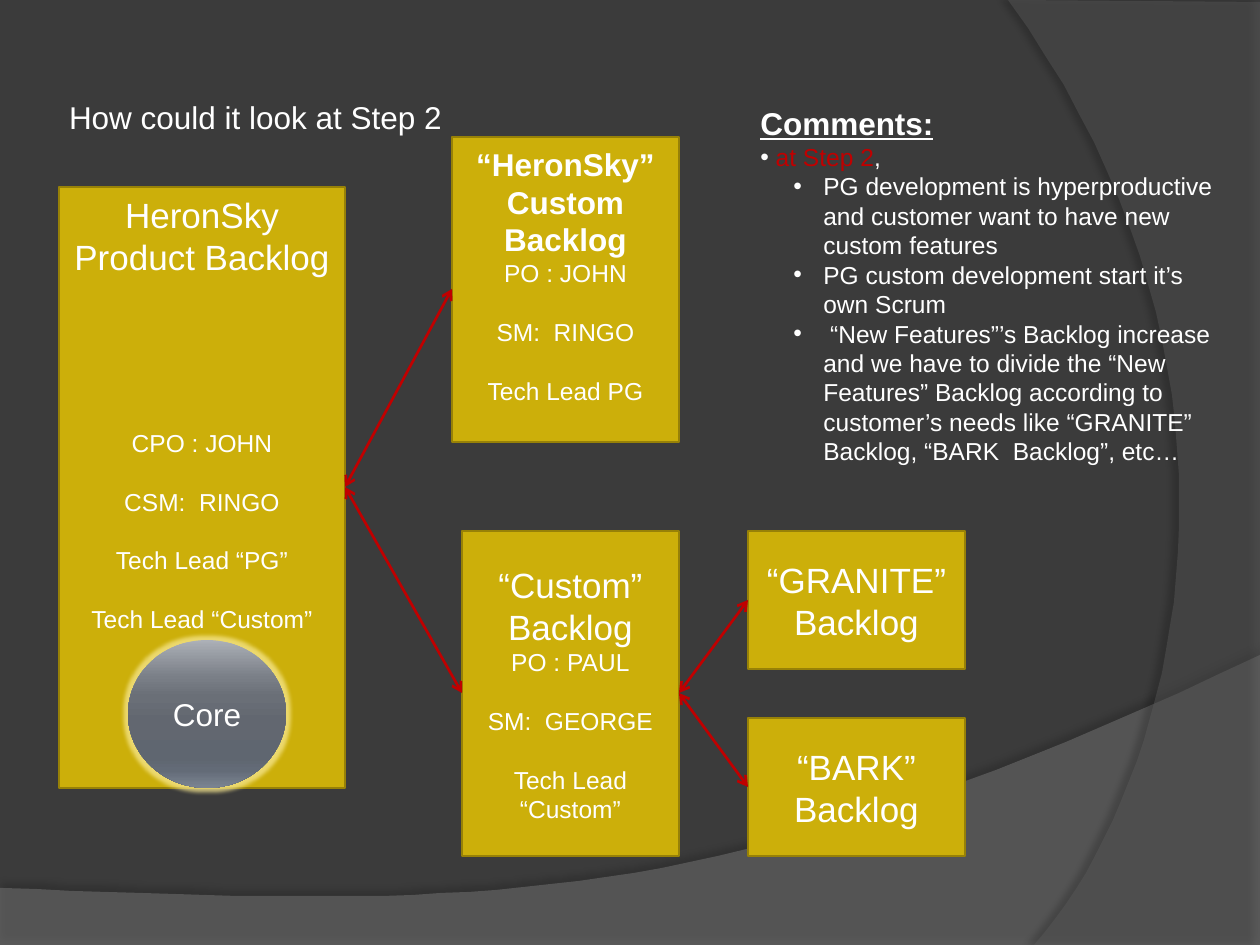
"""Build the Step 2 backlog slide."""
from typing import NamedTuple

from lxml.etree import SubElement
from pptx import Presentation
from pptx.dml.color import RGBColor
from pptx.enum.shapes import MSO_CONNECTOR as Link, MSO_SHAPE as Preset
from pptx.enum.text import MSO_ANCHOR as Anchor, PP_ALIGN as Align
from pptx.oxml.ns import qn
from pptx.util import Emu, Pt

SCALE = 914400 / 126
FONT = "Arial"
BLANK = 16.8
DARK = RGBColor(0x3B, 0x3B, 0x3B)
SWEEP_LOW = RGBColor(0x7F, 0x7F, 0x7F)
SWEEP_RIGHT = RGBColor(0x5E, 0x5E, 0x5E)
BLACK = RGBColor(0, 0, 0)
WHITE = RGBColor(0xFF, 0xFF, 0xFF)
GOLD = RGBColor(0xCC, 0xAF, 0x0A)
GOLD_EDGE = RGBColor(0x97, 0x81, 0x07)
GLOW = RGBColor(0xF8, 0xE8, 0x90)
RED = RGBColor(0xC0, 0, 0)
CORE_STOPS = {
    0: RGBColor(0xAC, 0xB0, 0xB7), 25: RGBColor(0x7A, 0x7F, 0x87),
    38: RGBColor(0x6A, 0x6F, 0x77), 55: RGBColor(0x62, 0x67, 0x70),
    80: RGBColor(0x5F, 0x66, 0x70), 88: RGBColor(0x63, 0x6B, 0x77),
    100: RGBColor(0x7B, 0x84, 0x92),
}


class Line(NamedTuple):
    text: str
    size: int = 14
    bold: bool = False
    gap: float = 0


class Backlog(NamedTuple):
    left: int
    top: int
    width: int
    height: int
    lines: tuple
    anchor: Anchor = Anchor.MIDDLE
    bottom: int = 6

    @property
    def west(self):
        return self.left, self.top + self.height // 2

    @property
    def east(self):
        return self.left + self.width, self.top + self.height // 2


def px(value) -> Emu:
    return Emu(round(value * SCALE))


def add_span(para, text: str, *, size=14, bold=False, underline=False, color=WHITE):
    span = para.add_run()
    span.text = text
    font = span.font
    font.name, font.size, font.bold = FONT, Pt(size), bold
    font.underline = underline
    font.color.rgb = color


def write(frame, text: str, *, align=Align.LEFT, gap=0, **look):
    para = frame.paragraphs[0]
    if para.runs:
        para = frame.add_paragraph()
    para.alignment = align
    para.space_before = Pt(gap)
    add_span(para, text, **look)
    return para


def add_bullet(para, margin: int = 0, hang: int = 0):
    props = para._p.get_or_add_pPr()
    props.set("marL", str(px(margin)))
    props.set("indent", str(-px(hang)))
    SubElement(props, qn("a:buFont"), typeface=FONT)
    SubElement(props, qn("a:buChar"), char="•")


def add_color(parent, color: RGBColor, alpha: int = 100):
    node = SubElement(parent, qn("a:srgbClr"), val=str(color))
    if alpha < 100:
        SubElement(node, qn("a:alpha"), val=str(alpha * 1000))


def add_effect(shape, kind: str, color: RGBColor, alpha: int, **settings):
    effects = shape.element.spPr.find(qn("a:effectLst"))
    add_color(SubElement(effects, qn(kind), **settings), color, alpha)


def curve(start, first, second, end, steps=40) -> list:
    points = []
    for step in range(1, steps + 1):
        t = step / steps
        weights = (1 - t) ** 3, 3 * t * (1 - t) ** 2, 3 * t * t * (1 - t), t ** 3
        points.append(tuple(
            sum(w * p[axis] for w, p in zip(weights, (start, first, second, end)))
            for axis in (0, 1)))
    return points


def add_sweep(page, points, color, alpha, shade, direction):
    builder = page.shapes.build_freeform(*points[0], scale=SCALE)
    builder.add_line_segments(points[1:], close=True)
    shape = builder.convert_to_shape()
    shape.shadow.inherit = False
    shape.line.fill.background()
    shape.fill.solid()
    shape.fill.fore_color.rgb = color
    fill = shape.element.spPr.find(qn("a:solidFill"))
    SubElement(fill[0], qn("a:alpha"), val=str(alpha * 1000))
    add_effect(shape, "a:outerShdw", BLACK, shade, blurRad=str(Pt(4)),
               dist=str(Pt(4)), dir=str(direction * 60000), rotWithShape="0")


def add_backlog(page, box: Backlog):
    shape = page.shapes.add_shape(
        Preset.RECTANGLE, *map(px, (box.left, box.top, box.width, box.height)))
    shape.shadow.inherit = False
    shape.fill.solid()
    shape.fill.fore_color.rgb = GOLD
    shape.line.color.rgb = GOLD_EDGE
    shape.line.width = Pt(1.5)
    frame = shape.text_frame
    frame.word_wrap = True
    frame.vertical_anchor = box.anchor
    frame.margin_bottom = px(box.bottom)
    for line in box.lines:
        write(frame, line.text, align=Align.CENTER, gap=line.gap,
              size=line.size, bold=line.bold)


def add_arrow(page, start, end):
    arrow = page.shapes.add_connector(Link.STRAIGHT, *map(px, (*start, *end)))
    arrow.line.color.rgb = RED
    arrow.line.width = Pt(1.5)
    outline = arrow.line._get_or_add_ln()
    for tip in ("a:headEnd", "a:tailEnd"):
        SubElement(outline, qn(tip), type="arrow")
    SubElement(arrow.element.spPr, qn("a:effectLst"))


def add_core(page):
    core = page.shapes.add_shape(Preset.OVAL, *map(px, (128, 640, 158, 148)))
    core.shadow.inherit = False
    core.line.fill.background()
    core.fill.gradient()
    core.fill.gradient_angle = 270
    stops = core.element.spPr.find(".//" + qn("a:gsLst"))
    stops.clear()
    for position, color in CORE_STOPS.items():
        add_color(SubElement(stops, qn("a:gs"), pos=str(position * 1000)), color)
    add_effect(core, "a:glow", GLOW, 75, rad=str(Pt(5)))
    core.text_frame.vertical_anchor = Anchor.MIDDLE
    write(core.text_frame, "Core", align=Align.CENTER, size=18)


def add_comments(page):
    box = page.shapes.add_textbox(*map(px, (748, 98, 493, 407)))
    frame = box.text_frame
    frame.word_wrap = True
    write(frame, "Comments:", size=18, bold=True, underline=True)
    para = write(frame, " ")
    add_span(para, "at Step 2", color=RED)
    add_span(para, ",")
    add_bullet(para)
    for text in (
        "PG development is hyperproductive and customer want to have new custom features",
        "PG custom development start it’s own Scrum",
        " “New Features”’s Backlog increase and we have to divide the “New Features” "
        "Backlog according to customer’s needs like “GRANITE” Backlog, "
        "“BARK  Backlog”, etc…",
    ):
        add_bullet(write(frame, text), margin=63, hang=30)


def main():
    deck = Presentation()
    deck.slide_width, deck.slide_height = px(1260), px(945)
    page = deck.slides.add_slide(deck.slide_layouts[5])
    page.background.fill.solid()
    page.background.fill.fore_color.rgb = DARK
    low = [(0, 888), (0, 945), (1260, 945), (1260, 655)]
    add_sweep(page, low + curve(low[-1], (704, 919), (493, 906), low[0]),
              SWEEP_LOW, 45, 35, 270)
    right = [(1260, 2), (1260, 945), (1034, 945)]
    add_sweep(page, right + curve(right[-1], (1178, 780), (1283, 378), (1008, 0)),
              SWEEP_RIGHT, 40, 45, 180)

    title = page.shapes.title
    title.element.getparent().append(title.element)
    title.left, title.top, title.width, title.height = map(px, (63, 38, 1029, 157))
    frame = title.text_frame
    frame.vertical_anchor = Anchor.MIDDLE
    frame.margin_left = frame.margin_right = px(6)
    write(frame, "How could it look at Step 2", size=18)

    special = Backlog(452, 137, 227, 305, (
        Line("“HeronSky” Custom Backlog", 18, True), Line("PO : JOHN"),
        Line("SM:  RINGO", gap=BLANK), Line("Tech Lead PG", gap=BLANK)), bottom=35)
    custom = Backlog(462, 531, 217, 325, (
        Line("“Custom”", 20), Line("Backlog", 20), Line("PO : PAUL"),
        Line("SM:  GEORGE", gap=BLANK), Line("Tech Lead “Custom”", gap=BLANK)))
    product = Backlog(59, 187, 286, 601, (
        Line("HeronSky Product Backlog", 20), Line("CPO : JOHN", gap=86),
        Line("CSM:  RINGO", gap=BLANK), Line("Tech Lead “PG”", gap=BLANK),
        Line("Tech Lead “Custom”", gap=BLANK)), Anchor.TOP)
    granite, bark = (
        Backlog(748, top, 217, 138, (Line(name, 20), Line("Backlog", 20)))
        for name, top in (("“GRANITE”", 531), ("“BARK”", 718)))
    for box in (special, custom, product, granite, bark):
        add_backlog(page, box)
    for source, target in ((product, special), (product, custom),
                           (custom, granite), (custom, bark)):
        add_arrow(page, source.east, target.west)
    add_comments(page)
    add_core(page)
    deck.save("out.pptx")


if __name__ == "__main__":
    main()
